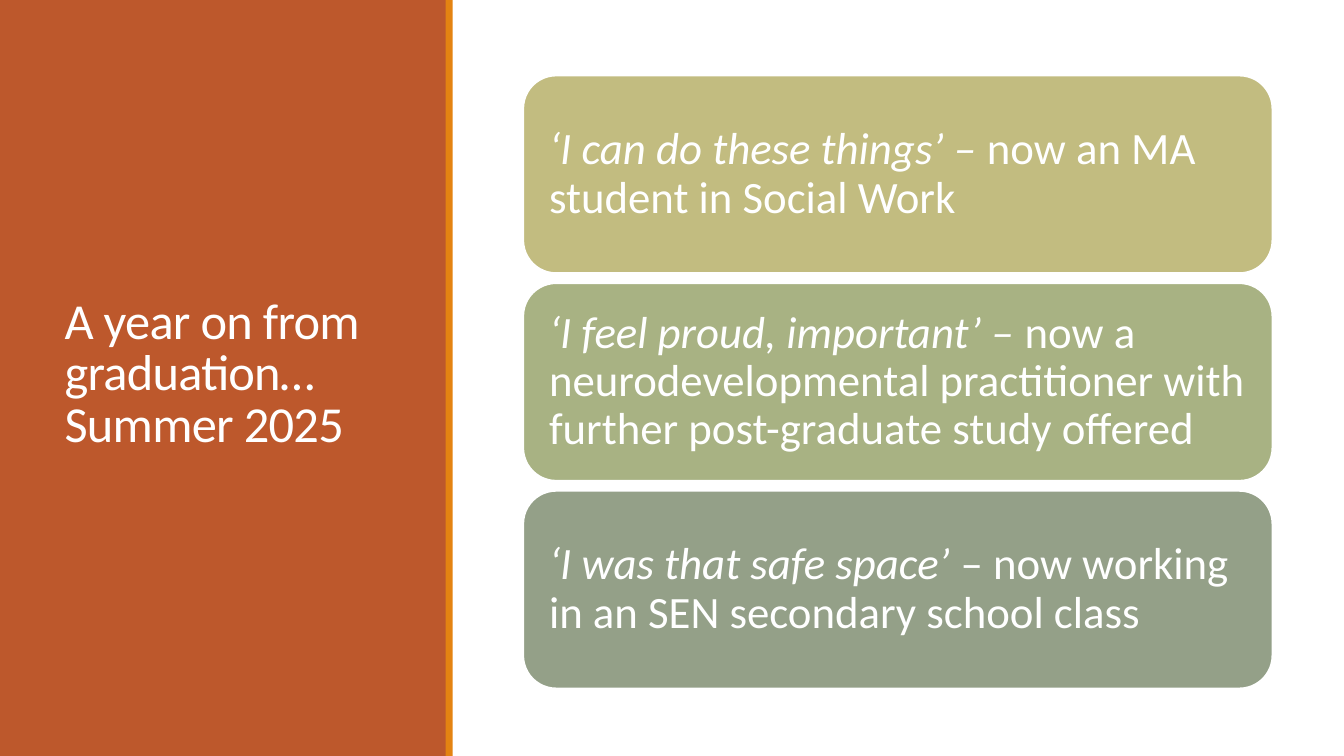
from pptx import Presentation
from pptx.dml.color import RGBColor
from pptx.enum.shapes import MSO_SHAPE
from pptx.enum.text import MSO_ANCHOR, MSO_AUTO_SIZE, PP_ALIGN
from pptx.util import Inches, Pt

RECT = MSO_SHAPE.RECTANGLE
ROUNDED = MSO_SHAPE.ROUNDED_RECTANGLE
MIDDLE = MSO_ANCHOR.MIDDLE
LEFT = PP_ALIGN.LEFT
NO_FIT = MSO_AUTO_SIZE.NONE

COLORS = {
    "white": "FFFFFF",
    "rust": "BD582C",
    "orange": "E48312",
    "sand": "C2BC80",
    "olive": "A8B283",
    "sage": "94A088",
}
QUOTES = [
    ("sand", "‘I can do these things’ – ", "now an MA student in Social Work"),
    ("olive", "‘I feel proud, important’ – ",
     "now a neurodevelopmental practitioner with further post-graduate study offered"),
    ("sage", "‘I was that safe space’ ", "– now working in an SEN secondary school class"),
]
CARD_TOP, CARD_HEIGHT, CARD_PITCH = 0.75, 1.96, 2.06


def add_block(kind, left, top, width, height, color):
    sp = slide.shapes.add_shape(kind, Inches(left), Inches(top), Inches(width), Inches(height))
    sp.shadow.inherit = False
    sp.fill.solid()
    sp.fill.fore_color.rgb = RGBColor.from_string(COLORS[color])
    sp.line.fill.background()
    return sp


def add_run(p, text, size, italic=False):
    r = p.add_run()
    r.text = text
    r.font.name = "Calibri"
    r.font.size = Pt(size)
    r.font.italic = italic
    r.font.color.rgb = RGBColor.from_string(COLORS["white"])
    return r


prs = Presentation()
prs.slide_width = Inches(13.33)
prs.slide_height = Inches(7.5)
slide = prs.slides.add_slide(prs.slide_layouts[5])

add_block(RECT, 0, 0, 4.43, 7.5, "rust")
add_block(RECT, 4.42, 0, 0.07, 7.5, "orange")

title = slide.shapes.title
title.left, title.top = Inches(0.54), Inches(0.57)
title.width, title.height = Inches(3.37), Inches(6.31)
tf = title.text_frame
tf.auto_size = NO_FIT
tf.word_wrap = True
tf.vertical_anchor = MIDDLE
p = tf.paragraphs[0]
p.alignment = LEFT
p.line_spacing = 0.85
r = add_run(p, "A year on from graduation… Summer 2025", 36)
r.font._element.set("spc", "-50")
slide.shapes._spTree.append(title._element)

for i, (color, quote, outcome) in enumerate(QUOTES):
    card = add_block(ROUNDED, 5.19, CARD_TOP + i * CARD_PITCH, 7.43, CARD_HEIGHT, color)
    card.line.color.rgb = RGBColor.from_string(COLORS["white"])
    card.line.width = Pt(1.25)
    tf = card.text_frame
    tf.word_wrap = True
    tf.vertical_anchor = MIDDLE
    tf.margin_left = tf.margin_right = Inches(0.16)
    tf.margin_top = tf.margin_bottom = Inches(0.13)
    p = tf.paragraphs[0]
    p.alignment = LEFT
    p.line_spacing = 0.9
    add_run(p, quote, 32, italic=True)
    add_run(p, outcome, 32)

prs.save("out.pptx")
